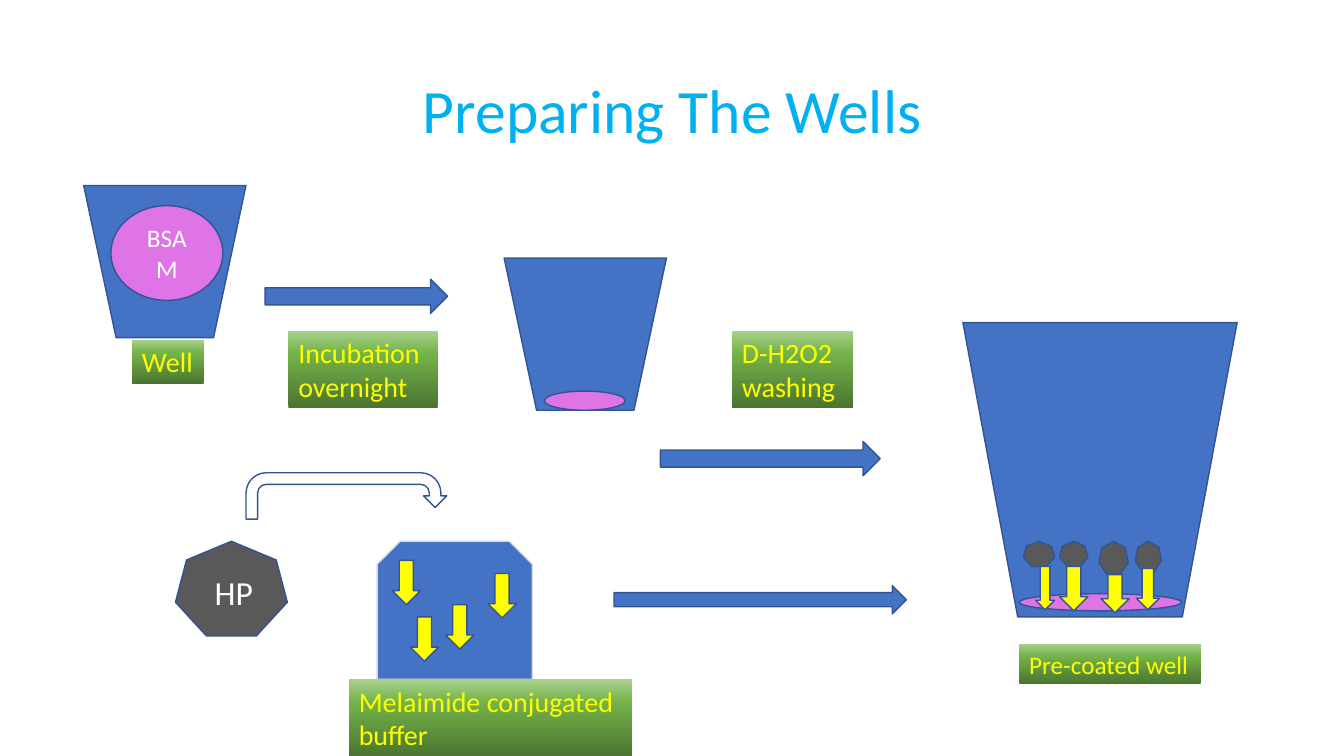
from copy import deepcopy

from pptx import Presentation
from pptx.dml.color import RGBColor
from pptx.enum.shapes import MSO_SHAPE as Shape
from pptx.enum.text import MSO_ANCHOR as Anchor, MSO_AUTO_SIZE as AutoSize, PP_ALIGN as Align
from pptx.oxml.ns import qn
from pptx.util import Emu, Pt

EMU_PER_PX = 9144  # 100 px to the inch
FONT = "Calibri"
COLORS = {
    "title": "00B0F0",
    "blue": "4472C4",
    "outline": "325491",
    "pale_outline": "D9D9D9",
    "bsa": "DE74E5",
    "hp": "595959",
    "hp_text": "FFFDF9",
    "yellow": "FFFF00",
    "white": "FFFFFF",
}
LABEL_GRADIENT = [(0, "4B7430"), (0.71, "74B349"), (1, "A9D18E")]


def px(*lengths):
    return [Emu(length * EMU_PER_PX) for length in lengths]


def rgb(name):
    return RGBColor.from_string(COLORS[name])


def format_text(frame, size, color, align=Align.LEFT):
    for paragraph in frame.paragraphs:
        paragraph.alignment = align
        for run in paragraph.runs:
            run.font.name = FONT
            run.font.size = Pt(size)
            run.font.color.rgb = rgb(color)


def add_title(slide, text):
    title = slide.shapes.title
    title.left, title.top, title.width, title.height = px(92, 40, 1150, 145)
    frame = title.text_frame
    frame.text = text
    frame.vertical_anchor = Anchor.MIDDLE
    frame.paragraphs[0].line_spacing = 0.9
    format_text(frame, 44, "title", Align.CENTER)


def add_part(slide, kind, box, fill, outline="outline"):
    part = slide.shapes.add_shape(kind, *px(*box))
    part.shadow.inherit = False
    part.fill.solid()
    part.fill.fore_color.rgb = rgb(fill)
    part.line.color.rgb = rgb(outline)
    part.line.width = Pt(1)
    return part


def add_caption(slide, text, box, size, color):
    caption = slide.shapes.add_textbox(*px(*box))
    frame = caption.text_frame
    frame.word_wrap = False
    frame.auto_size = AutoSize.SHAPE_TO_FIT_TEXT
    frame.text = text
    format_text(frame, size, color)
    return caption


def add_label(slide, text, box, size=20):
    label = add_caption(slide, text, box, size, "yellow")
    label.fill.gradient()
    label.fill.gradient_angle = 90
    stop_list = label.fill._xPr.find(qn("a:gradFill")).find(qn("a:gsLst"))
    stop_list.append(deepcopy(stop_list[-1]))
    for stop, (position, color) in zip(label.fill.gradient_stops, LABEL_GRADIENT):
        stop.position = position
        stop.color.rgb = RGBColor.from_string(color)


def main():
    prs = Presentation()
    prs.slide_width, prs.slide_height = px(1333, 750)
    slide = prs.slides.add_slide(prs.slide_layouts[5])
    add_title(slide, "Preparing The Wells")

    # Wells: fresh, incubated, pre-coated
    for box in [(83, 184, 161, 151), (500, 256, 161, 151), (955, 320, 272, 292)]:
        add_part(slide, Shape.FLOWCHART_MANUAL_OPERATION, box, "blue")

    # BSA in the fresh well, then settled as a coat
    bsa = add_part(slide, Shape.OVAL, (110, 204, 111, 94), "bsa")
    bsa.text_frame.text = "BSA\nM"
    bsa.text_frame.vertical_anchor = Anchor.MIDDLE
    format_text(bsa.text_frame, 18, "white", Align.CENTER)
    for box in [(540, 388, 80, 19), (1011, 589, 161, 17)]:
        add_part(slide, Shape.OVAL, box, "bsa")

    # Steps between the stages
    for box in [(263, 277, 181, 34), (655, 438, 218, 34), (609, 581, 290, 28)]:
        add_part(slide, Shape.RIGHT_ARROW, box, "blue")
    add_part(slide, Shape.U_TURN_ARROW, (244, 469, 199, 46), "white")

    # HP and the buffer it goes into
    add_part(slide, Shape.HEPTAGON, (174, 537, 111, 94), "hp")
    add_caption(slide, "HP", (203, 562, 59, 50), 24, "hp_text")
    add_part(slide, Shape.SNIP_2_SAME_RECTANGLE, (374, 537, 154, 137), "blue", "pale_outline")
    for left, top in [(389, 556), (442, 600), (407, 612), (484, 569)]:
        add_part(slide, Shape.DOWN_ARROW, (left, top, 28, 44), "yellow")

    # HP bound to the coat of the last well
    for left, width, height in [(1090, 29, 33), (1126, 26, 30), (1051, 28, 25), (1015, 31, 25)]:
        add_part(slide, Shape.HEPTAGON, (left, 537, width, height), "hp")
    for box in [(1127, 564, 23, 41), (1051, 562, 28, 44), (1027, 562, 19, 43), (1092, 570, 28, 38)]:
        add_part(slide, Shape.DOWN_ARROW, box, "yellow")

    # Labels
    add_label(slide, "Well", (131, 337, 71, 44))
    add_label(slide, "Incubation \vovernight", (286, 328, 148, 77))
    add_label(slide, "D-H2O2\vwashing", (726, 328, 120, 77))
    add_label(slide, "Melaimide conjugated \vbuffer", (346, 674, 281, 77))
    add_label(slide, "Pre-coated well", (1011, 639, 180, 40), 18)

    prs.save("out.pptx")


if __name__ == "__main__":
    main()
